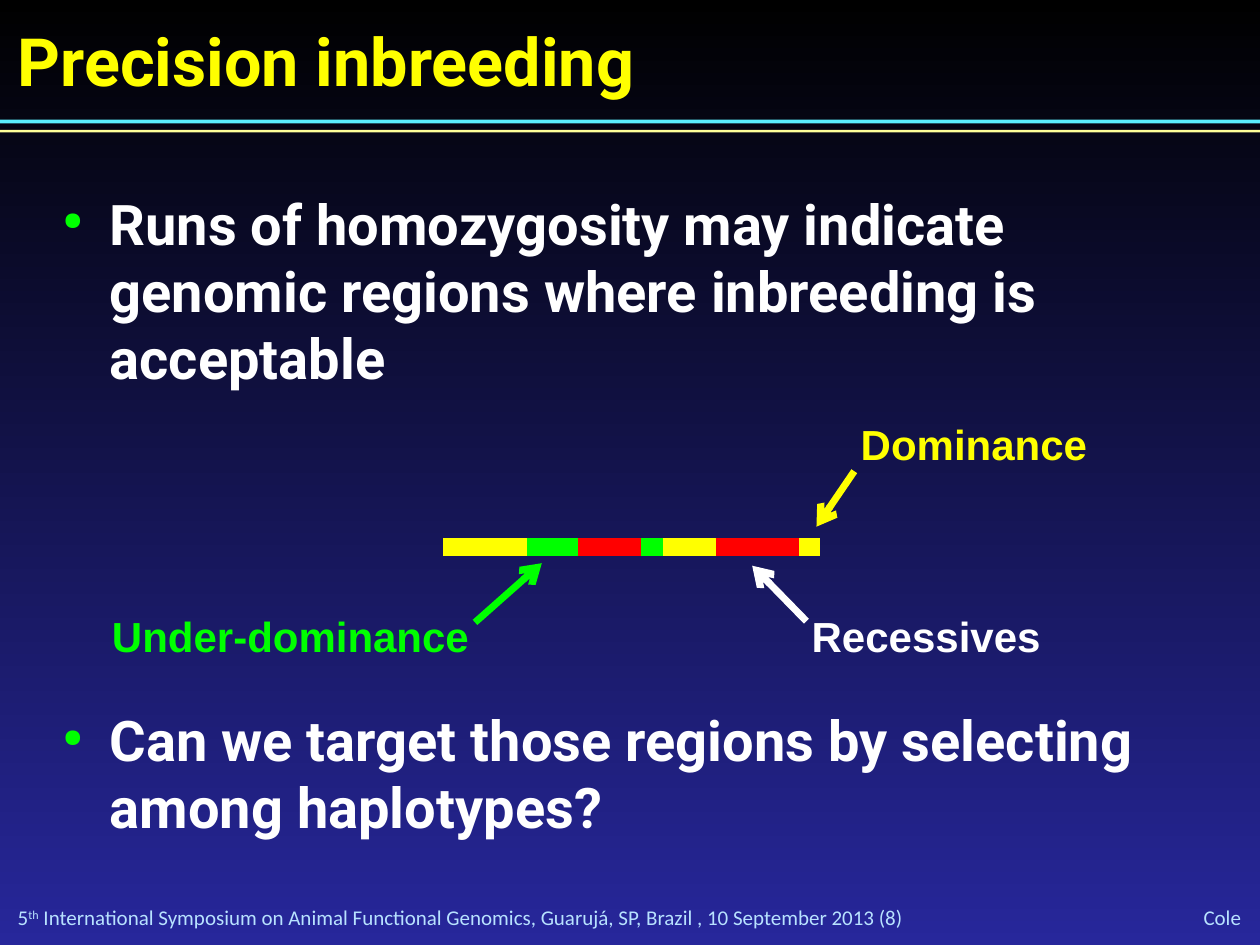
from lxml import etree
from pptx import Presentation
from pptx.dml.color import RGBColor
from pptx.enum.shapes import MSO_CONNECTOR, MSO_SHAPE
from pptx.enum.text import MSO_ANCHOR, PP_ALIGN
from pptx.oxml.ns import qn
from pptx.util import Inches, Pt

YELLOW, GREEN, RED, WHITE = "FFFF00", "00FF00", "FF0000", "FFFFFF"
FOOTER_BLUE = "B8E2FF"


def color(hex_string):
    return RGBColor.from_string(hex_string)


def paint_background(slide):
    fill = slide.background.fill
    fill.gradient()
    fill.gradient_angle = 270
    for stop, shade in zip(fill.gradient_stops, ("000000", "27279B")):
        stop.color.rgb = color(shade)


def format_span(span, size, font, shade, bold):
    span.font.size = Pt(size)
    span.font.name = font
    span.font.color.rgb = color(shade)
    span.font.bold = bold


def add_text(slide, place, texts, size, font, shade, bold=True,
             align=PP_ALIGN.LEFT, anchor=MSO_ANCHOR.TOP, inset=(0, 0)):
    """Add a text box with one paragraph for each list of spans."""
    box = slide.shapes.add_textbox(*map(Inches, place))
    frame = box.text_frame
    frame.word_wrap = True
    frame.vertical_anchor = anchor
    frame.margin_left = frame.margin_right = Inches(inset[0])
    frame.margin_top = frame.margin_bottom = Inches(inset[1])
    for index, spans in enumerate(texts):
        para = frame.add_paragraph() if index else frame.paragraphs[0]
        para.alignment = align
        for text in spans:
            span = para.add_run()
            span.text = text
            format_span(span, size, font, shade, bold)
    return box


def add_bullet(para, shade, percent, indent):
    properties = para._p.get_or_add_pPr()
    properties.set("marL", str(Inches(indent)))
    properties.set("indent", str(-Inches(indent)))
    bullet_color = etree.SubElement(properties, qn("a:buClr"))
    etree.SubElement(bullet_color, qn("a:srgbClr"), val=shade)
    etree.SubElement(properties, qn("a:buSzPct"), val=str(percent * 1000))
    etree.SubElement(properties, qn("a:buChar"), char="●")


def add_rule(slide, top, height, shade):
    rule = slide.shapes.add_shape(MSO_SHAPE.RECTANGLE, 0, Inches(top),
                                  Inches(10), Inches(height))
    rule.shadow.inherit = False
    rule.fill.solid()
    rule.fill.fore_color.rgb = color(shade)
    rule.line.fill.background()


def add_line(slide, start, end, shade, width, arrow=False):
    line = slide.shapes.add_connector(MSO_CONNECTOR.STRAIGHT,
                                      *map(Inches, start + end))
    line.line.color.rgb = color(shade)
    line.line.width = Pt(width)
    if arrow:
        etree.SubElement(line.line._get_or_add_ln(), qn("a:tailEnd"), type="arrow")
    etree.SubElement(line._element.spPr, qn("a:effectLst"))


def add_footer(slide):
    style = dict(size=12, font="Calibri", shade=FOOTER_BLUE, bold=False,
                 anchor=MSO_ANCHOR.MIDDLE)
    event = add_text(slide, (0.14, 7.18, 8.81, 0.2), [[
        "5", "th", " International Symposium on Animal Functional Genomics, "
        "Guarujá, SP, Brazil , 10 September 2013 (8)"]], **style)
    ordinal = event.text_frame.paragraphs[0].runs[1]
    ordinal.font._element.set("baseline", "30000")
    add_text(slide, (8.72, 7.17, 1.13, 0.21), [["Cole"]],
             align=PP_ALIGN.RIGHT, **style)


def add_body(slide):
    body = add_text(slide, (0.5, 1.5, 9, 5.39), [
        ["Runs of homozygosity may indicate genomic regions where "
         "inbreeding is acceptable"],
        ["Can we target those regions by selecting among haplotypes?"],
    ], 32, "Roboto", WHITE)
    first, second = body.text_frame.paragraphs
    first.space_after = Pt(180)  # room for the chromosome diagram
    for para in (first, second):
        add_bullet(para, GREEN, 45, 0.37)


def add_chromosome(slide):
    # Neighbouring segments share their ends
    edges = [3.52, 4.18, 4.59, 5.09, 5.26, 5.68, 6.34, 6.51]
    shades = [YELLOW, GREEN, RED, GREEN, YELLOW, RED, YELLOW]
    for left, right, shade in zip(edges, edges[1:], shades):
        add_line(slide, (left, 4.34), (right, 4.34), shade, 10)

    # Each label has an arrow to its kind of segment
    labels = [
        ("Dominance", (6.45, 3.27, 2.56, 0.5), YELLOW, PP_ALIGN.CENTER,
         (6.78, 3.74), (6.48, 4.18)),
        ("Recessives", (6.26, 4.8, 2.18, 0.5), WHITE, PP_ALIGN.CENTER,
         (6.4, 4.93), (5.97, 4.49)),
        ("Under-dominance", (0.79, 4.8, 3.25, 0.5), GREEN, PP_ALIGN.LEFT,
         (3.77, 4.94), (4.3, 4.47)),
    ]
    for text, place, shade, align, start, end in labels:
        add_text(slide, place, [[text]], 24, "Arial", shade,
                 align=align, inset=(0.1, 0.05))
        add_line(slide, start, end, shade, 4, arrow=True)


def main():
    deck = Presentation()
    deck.slide_width, deck.slide_height = Inches(10), Inches(7.5)
    page = deck.slides.add_slide(deck.slide_layouts[6])
    paint_background(page)
    add_footer(page)
    # Double rule under the title
    add_rule(page, 0.95, 0.03, "5BEFFF")
    add_rule(page, 1.03, 0.02, "FFFF99")
    add_text(page, (0.14, 0.16, 9, 0.64), [["Precision inbreeding"]],
             38, "Roboto", YELLOW)
    add_body(page)
    add_chromosome(page)
    deck.save("out.pptx")


if __name__ == "__main__":
    main()
